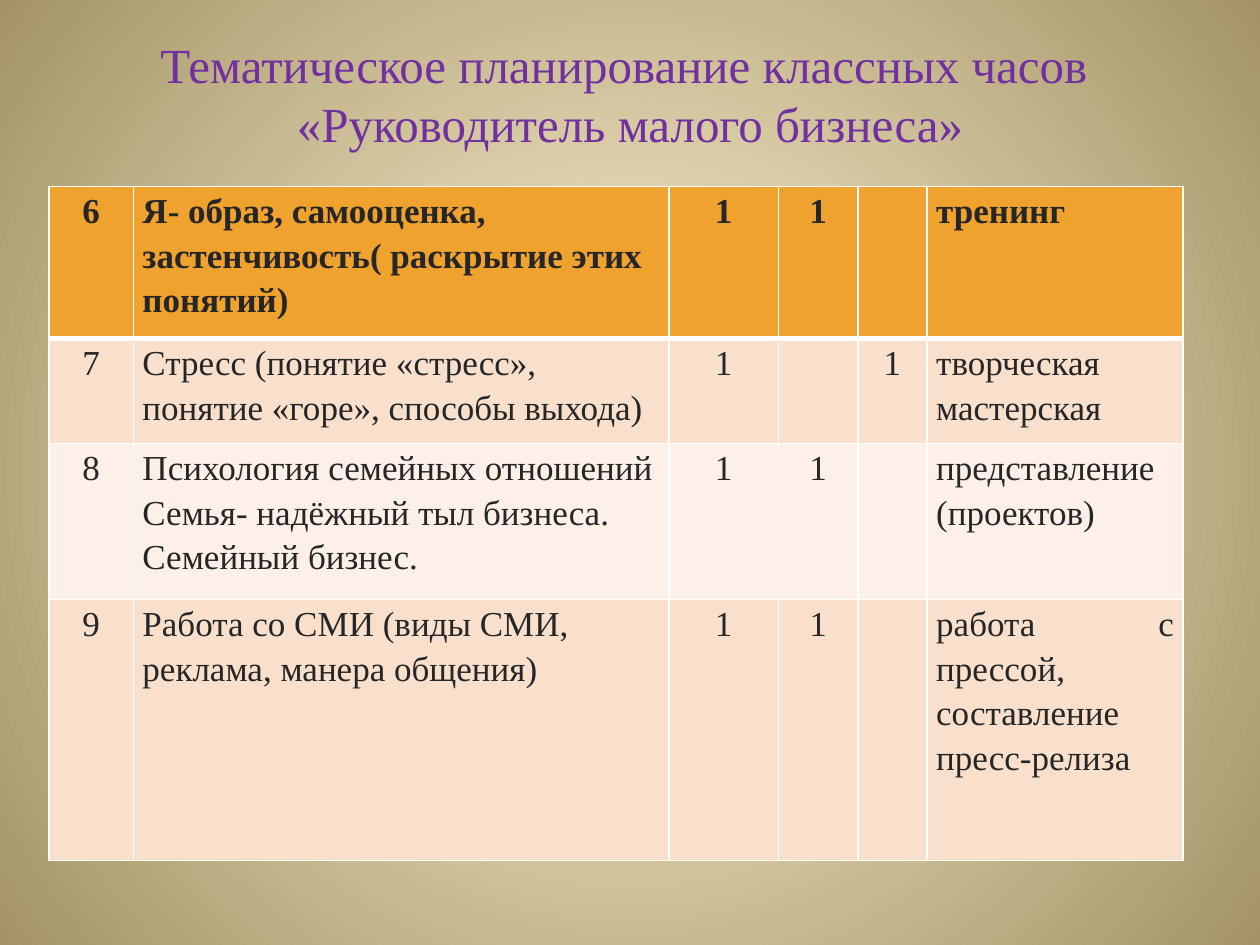
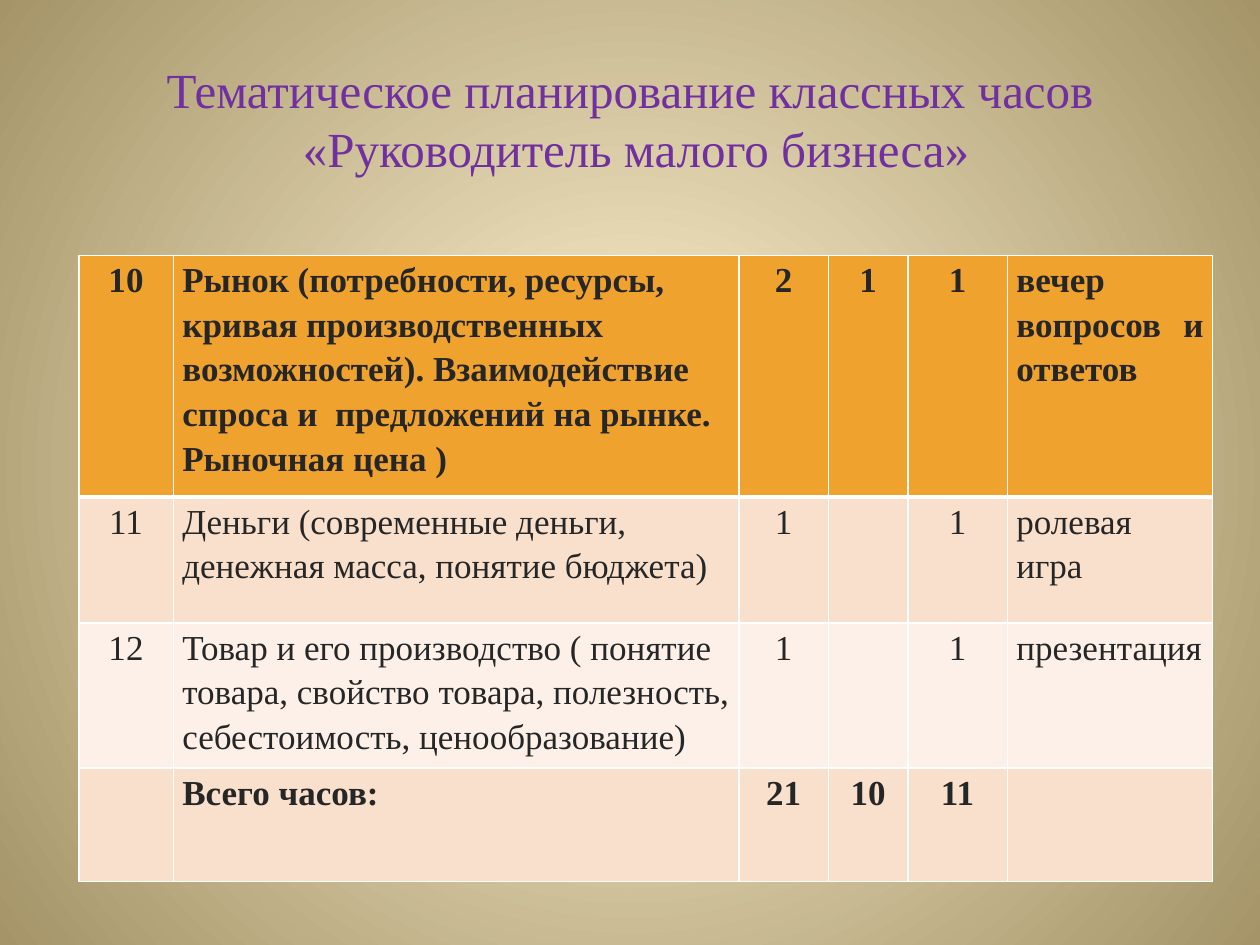
"""Build two slides with the lesson plan for the small-business class hours."""
from dataclasses import dataclass

from lxml.etree import SubElement
from pptx import Presentation
from pptx.dml.color import RGBColor as Rgb
from pptx.enum.text import MSO_ANCHOR as Anchor, PP_ALIGN as Align
from pptx.oxml.ns import qn
from pptx.util import Pt

TITLE = ["Тематическое планирование классных часов ", "«Руководитель малого бизнеса»"]
COLUMN_ALIGN = [Align.CENTER, Align.LEFT, Align.CENTER, Align.CENTER, Align.CENTER, Align.JUSTIFY]

PLANS = [
    {
        "title_at": (36, 16.5, 648, 73.5),
        "table_at": (28, 106.5),
        "widths": [48.24, 306, 62.64, 45.36, 39.6, 146.16],
        "heights": [87.12, 59.76, 89.28, 149.04],
        "lessons": [
            ("6", "Я- образ, самооценка, застенчивость( раскрытие этих понятий)", "1", "1", "", "тренинг"),
            ("7", "Стресс (понятие «стресс», понятие «горе», способы выхода)", "1", "", "1",
             "творческая мастерская"),
            ("8", "Психология семейных отношений Семья- надёжный тыл бизнеса. Семейный бизнес.",
             "1", "1", "", "представление (проектов)"),
            ("9", "Работа со СМИ (виды СМИ, реклама, манера общения)", "1", "1", "",
             "работа с прессой, составление пресс-релиза"),
        ],
    },
    {
        "title_at": (39.5, 22.5, 648, 90),
        "table_at": (45, 146),
        "widths": [54, 323.28, 51.12, 45.36, 56.88, 117.36],
        "heights": [119.52, 72, 82.08, 64.8],
        "lessons": [
            ("10", "Рынок (потребности, ресурсы, кривая производственных возможностей). "
             "Взаимодействие спроса и  предложений на рынке. Рыночная цена )",
             "2", "1", "1", "вечер вопросов и ответов"),
            ("11", "Деньги (современные деньги, денежная масса, понятие бюджета)", "1", "", "1",
             "ролевая игра"),
            ("12", "Товар и его производство ( понятие товара, свойство товара, полезность, "
             "себестоимость, ценообразование)", "1", "", "1", "презентация"),
            ("", "Всего часов:", "21", "10", "11", ""),
        ],
    },
]


@dataclass(frozen=True)
class Theme:
    font: str = "Times New Roman"
    title_size: float = 28
    cell_size: float = 20
    line_spacing: float = 1.15
    inset: float = 5.2
    thin: float = 1
    thick: float = 3
    glow: str = "FFF3D2"
    edge: str = "A49468"
    title: str = "7030A0"
    ink: str = "262626"
    border: str = "FFFFFF"
    header: str = "F0A22E"
    bands: tuple = ("FCF0E8", "F9E0CD")


THEME = Theme()


def write(frame, lines, *, size, color, align, bold=False, spacing=None):
    para = frame.paragraphs[0]
    para.alignment = align
    para.line_spacing = spacing
    for number, line in enumerate(lines):
        if number:
            para.add_line_break()
        span = para.add_run()
        span.text = line
        span.font.name = THEME.font
        span.font.size = Pt(size)
        span.font.bold = bold
        span.font.color.rgb = Rgb.from_string(color)


def paint_background(master):
    fill = master.background.fill
    fill.gradient()
    for stop, color in zip(fill.gradient_stops, (THEME.glow, THEME.edge)):
        stop.color.rgb = Rgb.from_string(color)
    gradient = next(master.element.iter(qn("a:gradFill")))
    gradient.remove(gradient.find(qn("a:lin")))
    circle = SubElement(gradient, qn("a:path"), path="circle")
    SubElement(circle, qn("a:fillToRect"), {side: "50000" for side in "ltrb"})


def draw_borders(cell, row):
    properties = cell._tc.get_or_add_tcPr()
    thick_sides = {0: "B", 1: "T"}
    for side in "LRTB":
        width = THEME.thick if thick_sides.get(row) == side else THEME.thin
        line = SubElement(properties, qn(f"a:ln{side}"), w=str(Pt(width)))
        fill = SubElement(line, qn("a:solidFill"))
        SubElement(fill, qn("a:srgbClr"), val=THEME.border)


def add_title(page, place):
    box = page.shapes.add_textbox(*map(Pt, place))
    box.text_frame.word_wrap = True
    box.text_frame.vertical_anchor = Anchor.MIDDLE
    write(box.text_frame, TITLE, size=THEME.title_size, color=THEME.title, align=Align.CENTER)


def fill_cell(cell, row, text, align, bold):
    cell.margin_left = cell.margin_right = Pt(THEME.inset)
    cell.margin_top = cell.margin_bottom = 0
    draw_borders(cell, row)
    cell.fill.solid()
    cell.fill.fore_color.rgb = Rgb.from_string(THEME.bands[row % 2] if row else THEME.header)
    if text:
        write(cell.text_frame, [text], size=THEME.cell_size, color=THEME.ink,
              align=align, bold=bold, spacing=THEME.line_spacing)


def add_plan(page, plan):
    widths, heights, lessons = plan["widths"], plan["heights"], plan["lessons"]
    size = sum(widths), sum(heights)
    table = page.shapes.add_table(len(heights), len(widths), *map(Pt, plan["table_at"] + size)).table
    table.first_row = table.horz_banding = False
    for column, width in zip(table.columns, widths):
        column.width = Pt(width)
    for row, (height, lesson) in enumerate(zip(heights, lessons)):
        table.rows[row].height = Pt(height)
        is_total = not lesson[0]
        for column, (text, align) in enumerate(zip(lesson, COLUMN_ALIGN)):
            fill_cell(table.cell(row, column), row, text, align, row == 0 or is_total)


def main():
    deck = Presentation()
    deck.slide_width, deck.slide_height = Pt(720), Pt(540)
    paint_background(deck.slide_master)
    for plan in PLANS:
        page = deck.slides.add_slide(deck.slide_layouts[6])
        add_title(page, plan["title_at"])
        add_plan(page, plan)
    deck.save("out.pptx")


if __name__ == "__main__":
    main()
